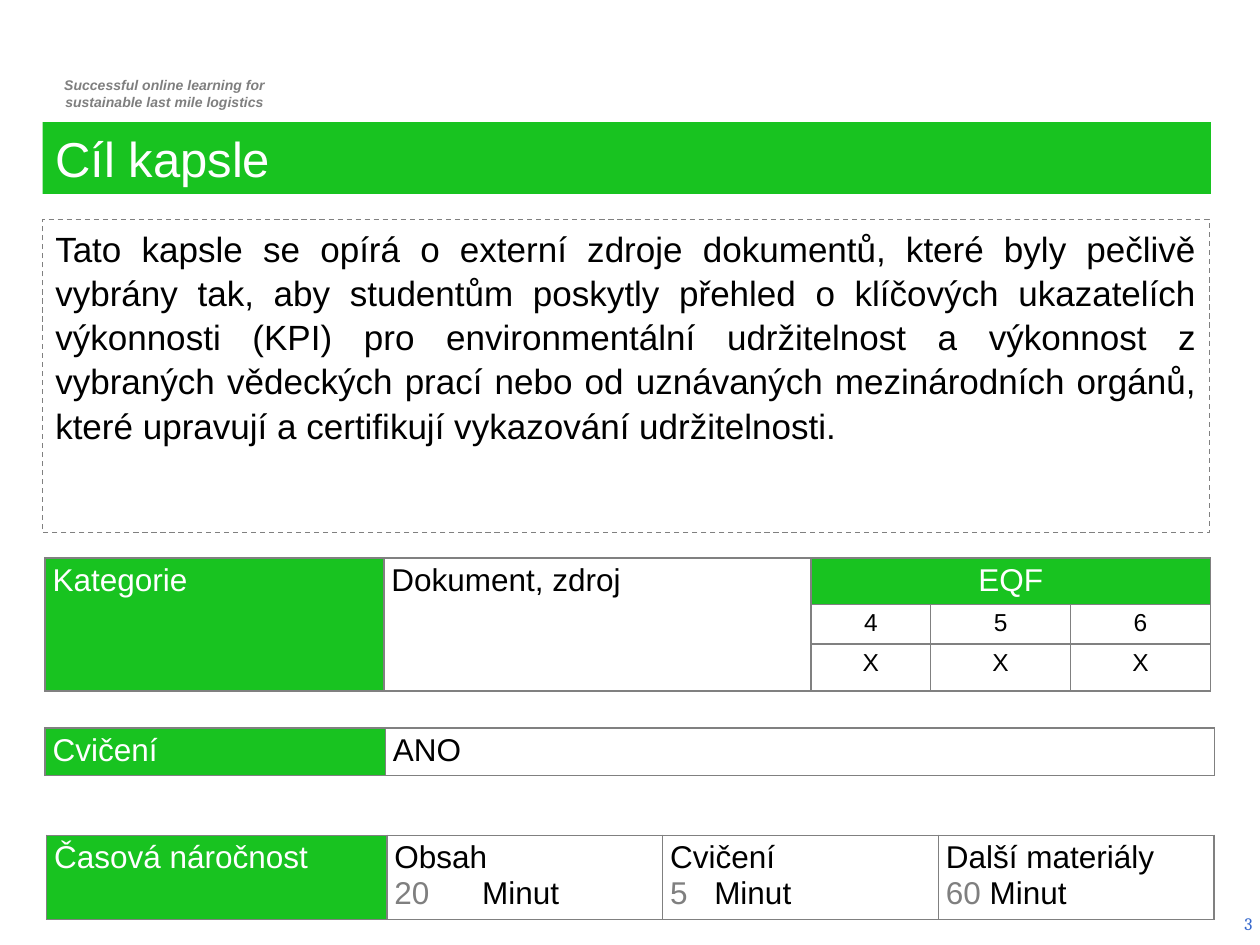
from lxml.etree import SubElement
from pptx import Presentation
from pptx.dml.color import RGBColor
from pptx.enum.dml import MSO_LINE_DASH_STYLE as Dash
from pptx.enum.text import MSO_ANCHOR as Anchor, MSO_AUTO_SIZE as AutoSize, PP_ALIGN as Align
from pptx.oxml.ns import qn
from pptx.util import Cm, Pt

COLORS = {"green": "18C320", "gray": "808080", "muted": "7F7F7F",
          "white": "FFFFFF", "black": "000000", "blue": "3366CC"}

# Content
TITLE = "Cíl kapsle"
GOAL = ("Tato kapsle se opírá o externí zdroje dokumentů, které byly pečlivě vybrány tak, "
        "aby studentům poskytly přehled o klíčových ukazatelích výkonnosti (KPI) pro "
        "environmentální udržitelnost a výkonnost z vybraných vědeckých prací nebo od "
        "uznávaných mezinárodních orgánů, které upravují a certifikují vykazování udržitelnosti.")
TAGLINE = ["Successful online learning for", "sustainable last mile logistics"]
PAGE_NUMBER = "3"
DURATIONS = [("Obsah", "20", "\tMinut", 1.77), ("Cvičení", "5", "\tMinut", 0.89),
             ("Další materiály", "60", " Minut", None)]

# Text formats
LABEL = {"size": 18, "color": "white", "align": Align.JUSTIFY, "fill": "green"}
VALUE = {"size": 18, "color": "black", "align": Align.JUSTIFY}
HEADING = LABEL | {"align": Align.CENTER}
LEVEL = {"size": 14, "color": "black", "align": Align.CENTER}

# Tables: position, column widths, row heights, merged areas, cells by (row, column)
TABLES = [
    {"at": (0.91, 11.25), "columns": [6.83, 8.61, 2.41, 2.82, 2.82], "rows": [0.94, 0.79, 0.95],
     "merges": [((0, 0), (2, 0)), ((0, 1), (2, 1)), ((0, 2), (0, 4))],
     "cells": {(0, 0): ("Kategorie", LABEL), (0, 1): ("Dokument, zdroj", VALUE),
               (0, 2): ("EQF", HEADING)}
     | {(1, 2 + i): (level, LEVEL) for i, level in enumerate("456")}
     | {(2, 2 + i): ("X", LEVEL) for i in range(3)}},
    {"at": (0.91, 14.68), "columns": [6.86, 16.71], "rows": [0.95], "merges": [],
     "cells": {(0, 0): ("Cvičení", LABEL), (0, 1): ("ANO", VALUE)}},
    {"at": (0.94, 16.84), "columns": [6.86] + [5.56] * 3, "rows": [1.7], "merges": [],
     "cells": {(0, 0): ("Časová náročnost", LABEL)}
     | {(0, 1 + i): (duration[0], VALUE) for i, duration in enumerate(DURATIONS)}},
]


def rgb(name):
    return RGBColor.from_string(COLORS[name])


def format_font(font, size, color, **values):
    font.color.rgb = rgb(color)
    for name, value in ({"size": Pt(size), "name": "Arial"} | values).items():
        setattr(font, name, value)


def write(paragraph, text, align, **font_values):
    paragraph.alignment = align
    run = paragraph.add_run()
    run.text = text
    format_font(run.font, **font_values)


def place(shape, *box):
    for name, value in zip(("left", "top", "width", "height"), box):
        setattr(shape, name, Cm(value))


def set_frame(frame, anchor):
    for name, value in {"word_wrap": True, "auto_size": AutoSize.NONE,
                        "vertical_anchor": anchor}.items():
        setattr(frame, name, value)


def add_text(slide, box, lines, anchor, **text_format):
    frame = slide.shapes.add_textbox(*map(Cm, box)).text_frame
    set_frame(frame, anchor)
    for i, line in enumerate(lines):
        paragraph = frame.add_paragraph() if i else frame.paragraphs[0]
        write(paragraph, line, **text_format)


def add_borders(cell):
    properties = cell._tc.get_or_add_tcPr()
    for side in ("lnL", "lnR", "lnT", "lnB"):
        line = SubElement(properties, qn(f"a:{side}"), w=str(Pt(1)))
        SubElement(SubElement(line, qn("a:solidFill")), qn("a:srgbClr"), val=COLORS["gray"])


def add_table(slide, at, columns, rows, merges, cells):
    table = slide.shapes.add_table(len(rows), len(columns), *map(Cm, at),
                                   Cm(sum(columns)), Cm(sum(rows))).table
    table.first_row = table.horz_banding = False
    for column, width in zip(table.columns, columns):
        column.width = Cm(width)
    for row, height in zip(table.rows, rows):
        row.height = Cm(height)
    for start, end in merges:
        table.cell(*start).merge(table.cell(*end))
    for cell in table.iter_cells():
        add_borders(cell)
        cell.fill.background()
        cell.margin_left = cell.margin_right = Cm(0.15)
        cell.margin_top = cell.margin_bottom = Cm(0.1)
    for position, (text, cell_format) in cells.items():
        cell = table.cell(*position)
        text_format = dict(cell_format)
        fill = text_format.pop("fill", None)
        if fill:
            cell.fill.solid()
            cell.fill.fore_color.rgb = rgb(fill)
        write(cell.text_frame.paragraphs[0], text, **text_format)
    return table


def main():
    presentation = Presentation()
    presentation.slide_width, presentation.slide_height = Cm(25.4), Cm(19.05)
    slide = presentation.slides.add_slide(presentation.slide_layouts[1])

    # Tagline and page number
    add_text(slide, (0.74, 1.42, 5.16, 0.94), TAGLINE, Anchor.TOP, align=Align.CENTER,
             size=8, color="muted", bold=True, italic=True)
    add_text(slide, (19.58, 18.11, 5.92, 1.02), [PAGE_NUMBER], Anchor.MIDDLE,
             align=Align.RIGHT, size=10, color="blue", name="Cambria")

    # Title bar
    title = slide.shapes.title
    place(title, 0.86, 2.46, 23.55, 1.45)
    title.fill.solid()
    title.fill.fore_color.rgb = rgb("green")
    set_frame(title.text_frame, Anchor.MIDDLE)
    write(title.text_frame.paragraphs[0], TITLE, Align.LEFT, size=28, color="white")

    # Goal in a dashed frame
    body = slide.placeholders[1]
    place(body, 0.86, 4.42, 23.52, 6.32)
    body.line.color.rgb = rgb("gray")
    body.line.width = Pt(0.75)
    body.line.dash_style = Dash.DASH
    set_frame(body.text_frame, Anchor.TOP)
    paragraph = body.text_frame.paragraphs[0]
    properties = paragraph._p.get_or_add_pPr()
    properties.set("marL", "0")
    properties.set("indent", "0")
    SubElement(properties, qn("a:buNone"))
    paragraph.space_before = Pt(0)
    paragraph.line_spacing = 1.05
    write(paragraph, GOAL, Align.JUSTIFY, size=20, color="black")

    # Tables, then the minutes in the last one
    tables = [add_table(slide, **table) for table in TABLES]
    for column, (_, minutes, unit, tab) in enumerate(DURATIONS, 1):
        paragraph = tables[-1].cell(0, column).text_frame.add_paragraph()
        if tab:
            stops = SubElement(paragraph._p.get_or_add_pPr(), qn("a:tabLst"))
            SubElement(stops, qn("a:tab"), pos=str(Cm(tab)), algn="l")
        write(paragraph, minutes, **VALUE | {"color": "muted"})
        write(paragraph, unit, **VALUE)

    presentation.save("out.pptx")


if __name__ == "__main__":
    main()
